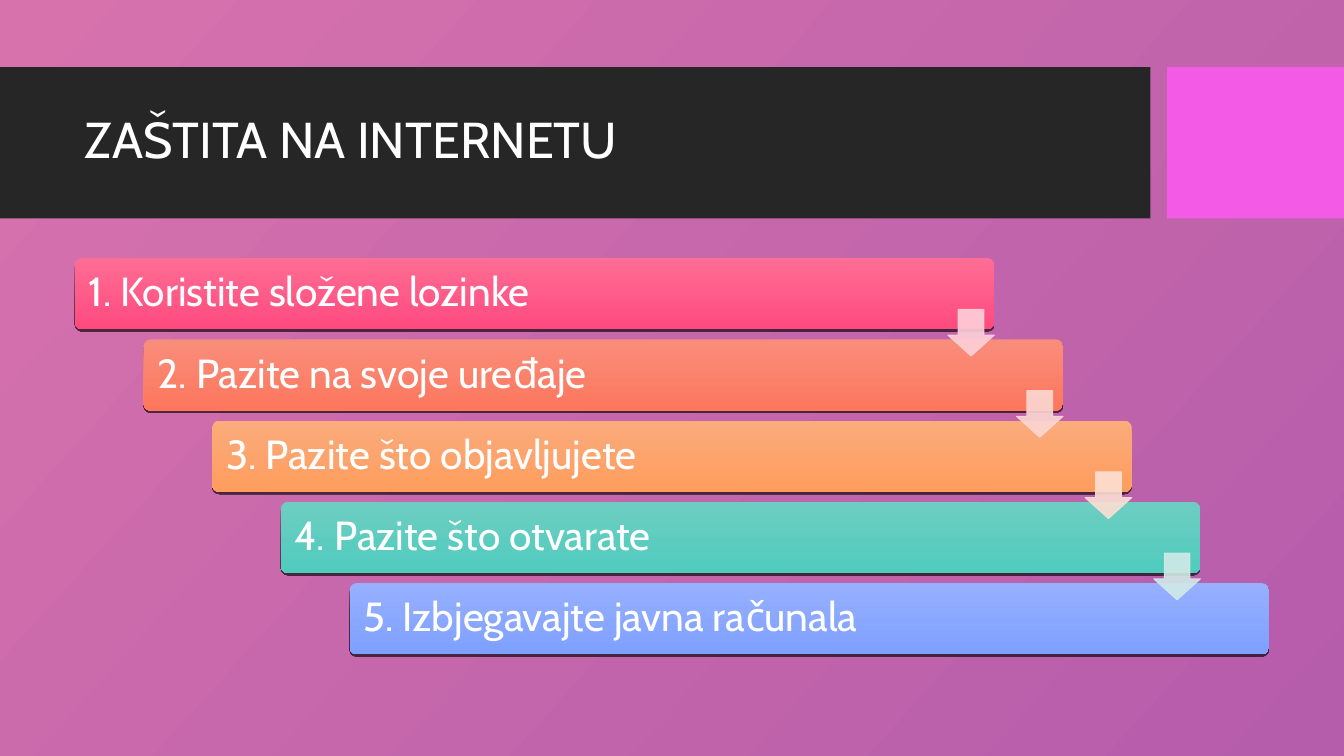
from dataclasses import dataclass

from lxml import etree
from pptx import Presentation
from pptx import util as u
from pptx.dml.color import RGBColor
from pptx.enum import shapes, text
from pptx.oxml import ns

Pt = u.Pt


@dataclass(frozen=True)
class Theme:
    font: str = "Cabin"
    title_size: int = 36
    step_size: int = 29
    ink: str = "FFFFFF"
    band: str = "262626"
    accent: str = "F35AE6"
    shadow: str = "000000"
    backdrop: tuple = ("D772AC", "B55CAB")


# Wording, bar gradient from top to bottom, colour of the arrow to the next step
STEPS = [
    ("1. Koristite složene lozinke", ("FE6D93", "FF4A7F"), "FED0D9"),
    ("2. Pazite na svoje uređaje", ("F98D7B", "FD775D"), "FBD7D3"),
    ("3. Pazite što objavljujete", ("FBAB7C", "FF9D5E"), "FCDFD3"),
    ("4. Pazite što otvarate", ("6ECDC2", "4FCCBE"), "D1EAE7"),
    ("5. Izbjegavajte javna računala", ("96B0FF", "7EA0FF"), None),
]
BAR_LEFT, BAR_TOP, BAR_WIDTH, BAR_HEIGHT = 53.5, 184.3, 656.8, 51
STEP_RIGHT, STEP_DOWN = 49.05, 58.05
ARROW_SIZE, ARROW_DROP = 33.3, 36.7


def add_alpha(color_element, percent):
    alpha = etree.SubElement(color_element, ns.qn("a:alpha"))
    alpha.set("val", str(percent * 1000))


class SlideBuilder:
    def __init__(self, slide, theme):
        self.slide = slide
        self.theme = theme

    def gradient(self, fill, colors, clockwise_angle):
        fill.gradient()
        fill.gradient_angle = 360 - clockwise_angle
        for stop, color in zip(fill.gradient_stops, colors):
            stop.color.rgb = RGBColor.from_string(color)

    def block(self, kind, left, top, width, height, color=None):
        block = self.slide.shapes.add_shape(
            kind, Pt(left), Pt(top), Pt(width), Pt(height))
        block.shadow.inherit = False
        block.line.fill.background()
        if color:
            block.fill.solid()
            block.fill.fore_color.rgb = RGBColor.from_string(color)
        return block

    def label(self, frame, wording, size):
        frame.word_wrap = True
        frame.vertical_anchor = text.MSO_ANCHOR.MIDDLE
        frame.text = wording
        paragraph = frame.paragraphs[0]
        paragraph.alignment = text.PP_ALIGN.LEFT
        paragraph.line_spacing = 0.9
        font = paragraph.runs[0].font
        font.name, font.size = self.theme.font, Pt(size)
        font.color.rgb = RGBColor.from_string(self.theme.ink)
        return paragraph

    def title(self, wording, left, top, width, height):
        heading = self.slide.shapes.add_textbox(
            Pt(left), Pt(top), Pt(width), Pt(height))
        self.label(heading.text_frame, wording, self.theme.title_size)

    def drop_shadow(self, block, distance):
        effects = block.element.spPr.find(ns.qn("a:effectLst"))
        shadow = etree.SubElement(effects, ns.qn("a:outerShdw"), blurRad="0",
                                  dist=str(Pt(distance)), dir="5400000",
                                  algn="ctr", rotWithShape="0")
        color = etree.SubElement(shadow, ns.qn("a:srgbClr"),
                                 val=self.theme.shadow)
        add_alpha(color, 63)

    def bar(self, wording, colors, left, top):
        bar = self.block(shapes.MSO_SHAPE.ROUNDED_RECTANGLE,
                         left, top, BAR_WIDTH, BAR_HEIGHT)
        bar.adjustments[0] = 0.1
        self.gradient(bar.fill, colors, 90)
        self.drop_shadow(bar, 1.5)
        frame = bar.text_frame
        frame.margin_left = frame.margin_top = frame.margin_bottom = Pt(8.5)
        frame.margin_right = Pt(68)
        self.label(frame, wording, self.theme.step_size).space_after = Pt(12)

    def arrow(self, color, left, top):
        arrow = self.block(shapes.MSO_SHAPE.DOWN_ARROW,
                           left, top, ARROW_SIZE, ARROW_SIZE, color)
        arrow.adjustments[0], arrow.adjustments[1] = 0.55, 0.45
        arrow.line.color.rgb = RGBColor.from_string(color)
        arrow.line.width = Pt(0.75)
        for tint in arrow.element.spPr.iter(ns.qn("a:srgbClr")):
            add_alpha(tint, 90)


def main():
    deck = Presentation()
    deck.slide_width, deck.slide_height = Pt(960), Pt(540)
    theme = Theme()
    slide = deck.slides.add_slide(deck.slide_layouts[6])
    builder = SlideBuilder(slide, theme)

    builder.gradient(slide.background.fill, theme.backdrop, 42)
    rectangle = shapes.MSO_SHAPE.RECTANGLE
    builder.block(rectangle, 0, 48, 821.8, 108, theme.band)
    builder.block(rectangle, 833.6, 48, 126.4, 108, theme.accent)
    builder.title("ZAŠTITA NA INTERNETU", 53.5, 59, 756.5, 85)

    corners = [(BAR_LEFT + i * STEP_RIGHT, BAR_TOP + i * STEP_DOWN)
               for i in range(len(STEPS))]
    for (wording, colors, _), (left, top) in zip(STEPS, corners):
        builder.bar(wording, colors, left, top)
    for (_, _, tint), (left, top) in zip(STEPS, corners):
        if tint:
            builder.arrow(tint, left + BAR_WIDTH - ARROW_SIZE,
                          top + ARROW_DROP)

    deck.save("out.pptx")


if __name__ == "__main__":
    main()
